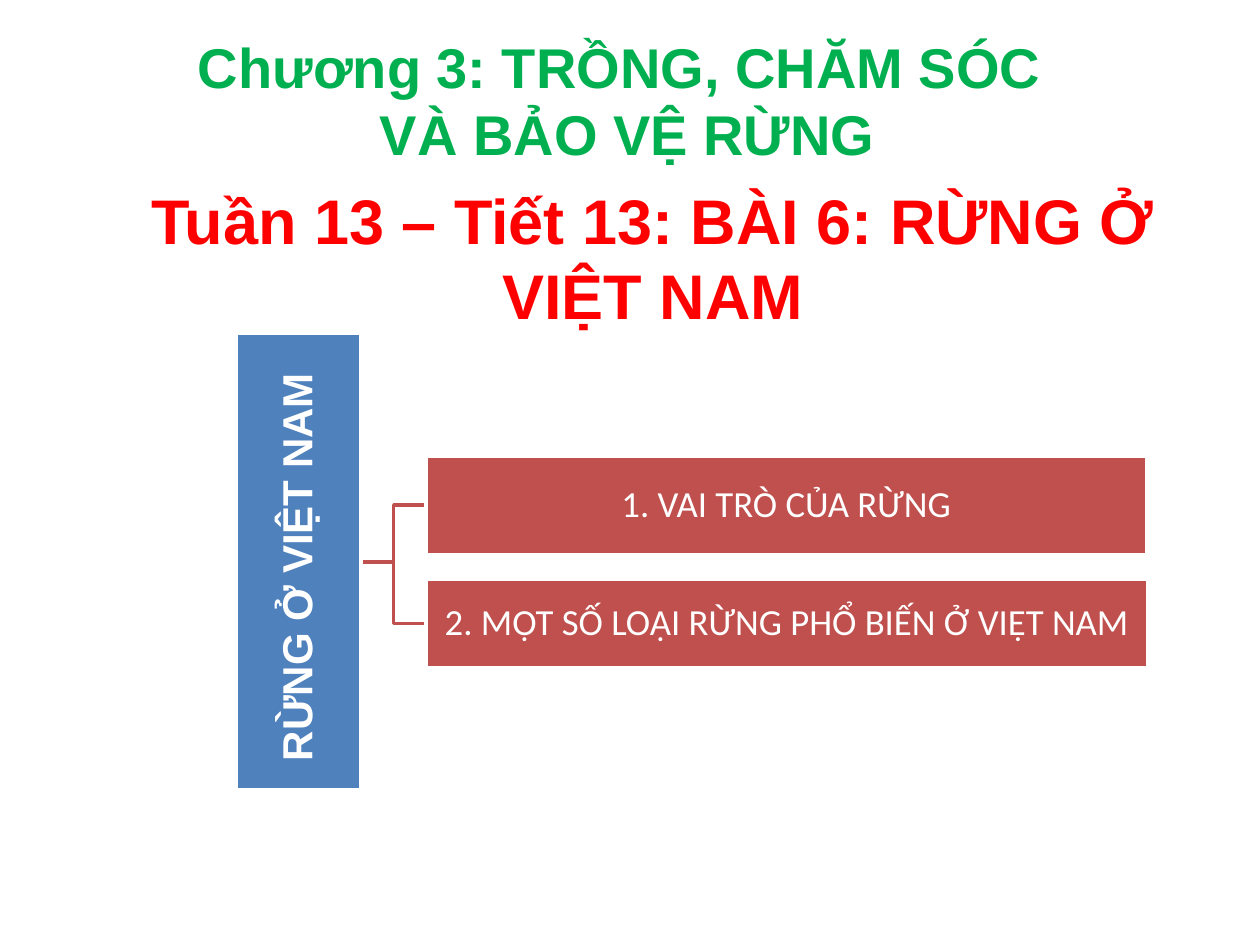
from pptx import Presentation
from pptx.dml.color import RGBColor
from pptx.enum import shapes, text
from pptx.util import Inches, Pt

GREEN, RED, BLUE, BRICK, WHITE = "00B050", "FF0000", "4F81BD", "C0504D", "FFFFFF"


def rgb(value):
    return RGBColor.from_string(value)


def place(sp, left, top, width, height):
    sp.left, sp.top = Inches(left), Inches(top)
    sp.width, sp.height = Inches(width), Inches(height)


def write(tf, lines, size, color, font="Arial", bold=True):
    tf.word_wrap = True
    for i, line in enumerate(lines):
        p = tf.paragraphs[0] if i == 0 else tf.add_paragraph()
        p.alignment = text.PP_ALIGN.CENTER
        r = p.add_run()
        r.text = line
        r.font.name = font
        r.font.size = Pt(size)
        r.font.bold = bold
        r.font.color.rgb = rgb(color)


def add_title(slide, lines):
    sp = slide.shapes.title
    place(sp, 0.2, 0.21, 9.56, 1.18)
    sp.text_frame.vertical_anchor = text.MSO_ANCHOR.TOP
    sp.text_frame.auto_size = text.MSO_AUTO_SIZE.NONE
    write(sp.text_frame, lines, 32, GREEN)


def add_lesson(slide, line):
    sp = slide.shapes.add_textbox(Inches(0.77), Inches(1.39), Inches(8.82), Inches(1.31))
    write(sp.text_frame, [line], 36, RED)


def add_branch(slide, start, end):
    (x1, y1), (x2, y2) = start, end
    middle = (x1 + x2) / 2
    points = [(Inches(x), Inches(y)) for x, y in
              [(x1, y1), (middle, y1), (middle, y2), (x2, y2)]]
    builder = slide.shapes.build_freeform(*points[0])
    builder.add_line_segments(points[1:], close=False)
    sp = builder.convert_to_shape()
    sp.shadow.inherit = False
    sp.fill.background()
    sp.line.color.rgb = rgb(BRICK)
    sp.line.width = Pt(2)


def add_box(slide, box, label, fill, size, font, bold=False, rotation=0, inset=0.01):
    sp = slide.shapes.add_shape(shapes.MSO_SHAPE.RECTANGLE, *map(Inches, box))
    sp.rotation = rotation
    sp.shadow.inherit = False
    sp.fill.solid()
    sp.fill.fore_color.rgb = rgb(fill)
    sp.line.color.rgb = rgb(WHITE)
    sp.line.width = Pt(2)
    tf = sp.text_frame
    tf.margin_left = tf.margin_right = tf.margin_top = tf.margin_bottom = Inches(inset)
    tf.vertical_anchor = text.MSO_ANCHOR.MIDDLE
    write(tf, [label], size, WHITE, font, bold)
    tf.paragraphs[0].line_spacing = 0.9


def main():
    prs = Presentation()
    prs.slide_width, prs.slide_height = Inches(10), Inches(7.5)
    slide = prs.slides.add_slide(prs.slide_layouts[5])

    add_title(slide, ["Chương 3: TRỒNG, CHĂM SÓC ", "VÀ BẢO VỆ RỪNG"])
    add_lesson(slide, "Tuần 13 – Tiết 13: BÀI 6: RỪNG Ở VIỆT NAM")

    topics = [
        ((3.38, 3.62, 5.72, 0.78), "1. VAI TRÒ CỦA RỪNG"),
        ((3.38, 4.6, 5.73, 0.7), "2. MỘT SỐ LOẠI RỪNG PHỔ BIẾN Ở VIỆT NAM"),
    ]
    for (left, top, _, height), _ in topics:
        add_branch(slide, (2.87, 4.46), (left, top + height / 2))
    add_box(slide, (0.56, 3.96, 3.62, 0.99), "RỪNG Ở VIỆT NAM ", BLUE, 24, "Arial",
            bold=True, rotation=270, inset=0.02)
    for box, label in topics:
        add_box(slide, box, label, BRICK, 21, "Calibri")

    prs.save("out.pptx")


if __name__ == "__main__":
    main()
